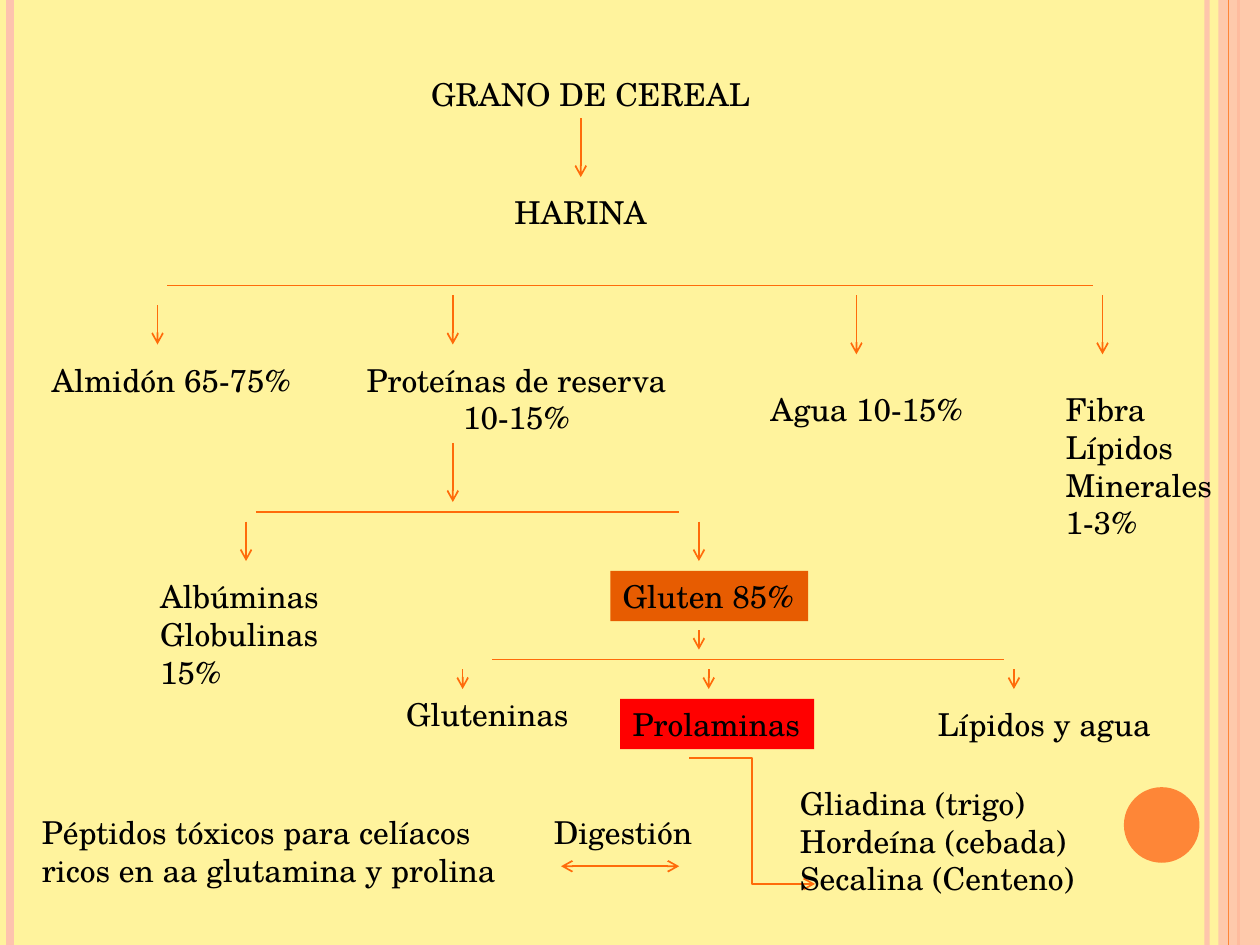
from pptx import Presentation
from pptx.dml.color import RGBColor
from pptx.enum.shapes import MSO_CONNECTOR, MSO_SHAPE
from pptx.enum.text import MSO_ANCHOR, MSO_AUTO_SIZE, PP_ALIGN
from pptx.oxml.ns import qn
from pptx.util import Inches, Pt
from lxml.etree import SubElement

COLORS = {"paper": "FFF39D", "pink": "FEC3AE", "dot": "FE8637", "line": "FF6B0A",
          "gluten": "E75C01", "toxic": "FF0000", "text": "000000"}
FONT = "TeX Gyre Schola"
WIDTH, HEIGHT = 10, 7.5
COLS = 128                     # square grid: 128 columns by 96 rows
UNIT = WIDTH / COLS
ROWS = HEIGHT / UNIT


def tint(fill, name, alpha=None):
    fill.solid()
    fill.fore_color.rgb = RGBColor.from_string(COLORS[name])
    if alpha:
        color = fill._xPr.find(qn("a:solidFill"))[0]
        SubElement(color, qn("a:alpha"), val=str(alpha * 1000))


class Region:
    """Places parts in grid units, relative to the region's box."""

    def __init__(self, slide, box):
        self.slide, self.shapes = slide, slide.shapes
        self.left, self.top, self.width, self.height = box

    def spot(self, col, row):
        return Inches((self.left + col) * UNIT), Inches((self.top + row) * UNIT)

    def line(self, start, end, ends=(), color="line", weight=1, alpha=None,
             kind=MSO_CONNECTOR.STRAIGHT):
        link = self.shapes.add_connector(kind, *self.spot(*start), *self.spot(*end))
        link.line.width = Pt(weight)
        tint(link.line.fill, color, alpha)
        for end in ends:
            SubElement(link.line._get_or_add_ln(), qn(f"a:{end}End"), type="arrow")
        SubElement(link._element.spPr, qn("a:effectLst"))

    def drop(self, col, top, bottom):
        self.line((col, top), (col, bottom), ["tail"])

    def shape(self, kind, box, color, alpha=None):
        col, row, wide, high = box
        item = self.shapes.add_shape(kind, *self.spot(col, row),
                                     Inches(wide * UNIT), Inches(high * UNIT))
        item.shadow.inherit = False
        item.line.fill.background()
        tint(item.fill, color, alpha)

    def text(self, col, row, wide, lines, fill=None, wrap=False, rows=None,
             center=(), title=False):
        high = Inches(0.1 + 0.3 * (rows or len(lines)))
        place = (*self.spot(col, row), Inches(wide * UNIT), high)
        if title:
            item = self.shapes.title
            item.left, item.top, item.width, item.height = place
        else:
            item = self.shapes.add_textbox(*place)
        if fill:
            tint(item.fill, fill)
        frame = item.text_frame
        frame.word_wrap = wrap
        frame.auto_size = MSO_AUTO_SIZE.SHAPE_TO_FIT_TEXT
        frame.vertical_anchor = MSO_ANCHOR.TOP
        for i, words in enumerate(lines):
            para = frame.add_paragraph() if i else frame.paragraphs[0]
            para.alignment = PP_ALIGN.CENTER if i in center else PP_ALIGN.LEFT
            run = para.add_run()
            run.text = words
            run.font.size, run.font.name = Pt(18), FONT
            run.font.color.rgb = RGBColor.from_string(COLORS["text"])


def border(slide, box):
    part = Region(slide, box)
    wide, high = part.width, part.height

    def rule(share, color, weight, alpha=None):
        part.line((wide * share, 0), (wide * share, high), color=color,
                  weight=weight, alpha=alpha)

    rule(0.958, "pink", 3, 93)
    rule(0.008, "pink", 4.5)
    rule(0.983, "dot", 1.5)
    part.shape(MSO_SHAPE.RECTANGLE, (wide * 0.967, 0, wide * 0.033, high), "pink", 87)
    rule(0.975, "dot", 0.75)
    part.shape(MSO_SHAPE.OVAL, (wide * 0.892, high * 0.833, wide * 0.06, high * 0.08), "dot")


def grain(slide, box):
    part = Region(slide, box)
    part.text(0, 0, 58, ["GRANO DE CEREAL"], wrap=True, center=[0], title=True)
    part.drop(28, 5, 11)
    part.text(20, 12, 20, ["HARINA"], wrap=True)


def flour(slide, box):
    part = Region(slide, box)
    part.line((13, 0), (107, 0))
    for drop in [(12, 2, 6), (42, 1, 6), (83, 1, 7), (108, 1, 7)]:
        part.drop(*drop)
    part.text(0, 7, 27.1, ["Almidón 65-75%"])
    part.text(32, 7, 33.4, ["Proteínas de reserva", "10-15%"], center=[1])
    part.text(73, 10, 22.3, ["Agua 10-15%"])
    part.text(103, 10, 17.5, ["Fibra", "Lípidos", "Minerales", "1-3%"])


def protein(slide, box):
    part = Region(slide, box)
    part.drop(31, 0, 6)
    part.line((11, 7), (54, 7))
    for col in (10, 56):
        part.drop(col, 8, 12)
    part.text(0, 13, 18.8, ["Albúminas", "Globulinas", "15%"])
    part.text(47, 13, 20.1, ["Gluten 85%"], "gluten")


def gluten(slide, box):
    part = Region(slide, box)
    part.drop(31, 0, 2)
    part.line((10, 3), (50, 3))
    part.line((48, 3), (62, 3))
    for col in (7, 32, 63):
        part.drop(col, 4, 6)
    part.text(0, 6, 19.2, ["Gluteninas"])
    part.text(23, 7, 19.7, ["Prolaminas"], "toxic")
    part.text(54, 7, 24.4, ["Lípidos y agua"])


def toxins(slide, box):
    part = Region(slide, box)
    part.line((67, 0), (79.8, 12.8), ["tail"], kind=MSO_CONNECTOR.ELBOW)
    part.text(77, 2, 30.7, ["Gliadina (trigo)", "Hordeína (cebada)", "Secalina (Centeno)"])
    part.line((54, 11), (66, 11), ["head", "tail"])
    part.text(52, 5, 16.8, ["Digestión"])
    part.text(0, 5, 50.6, ["Péptidos tóxicos para celíacos ricos en aa glutamina y prolina"],
              wrap=True, rows=2)


def main():
    deck = Presentation()
    deck.slide_width, deck.slide_height = Inches(WIDTH), Inches(HEIGHT)
    slide = deck.slides.add_slide(deck.slide_layouts[5])
    tint(slide.background.fill, "paper")
    # Regions from top to bottom: left, top, width, height in grid units
    border(slide, (0, 0, COLS, ROWS))
    grain(slide, (31, 7, 58, 17))
    flour(slide, (4, 29, 120, 27))
    protein(slide, (15, 45, 68, 26))
    gluten(slide, (40, 64, 79, 12))
    toxins(slide, (3, 77, 108, 15))
    deck.save("out.pptx")


if __name__ == "__main__":
    main()
